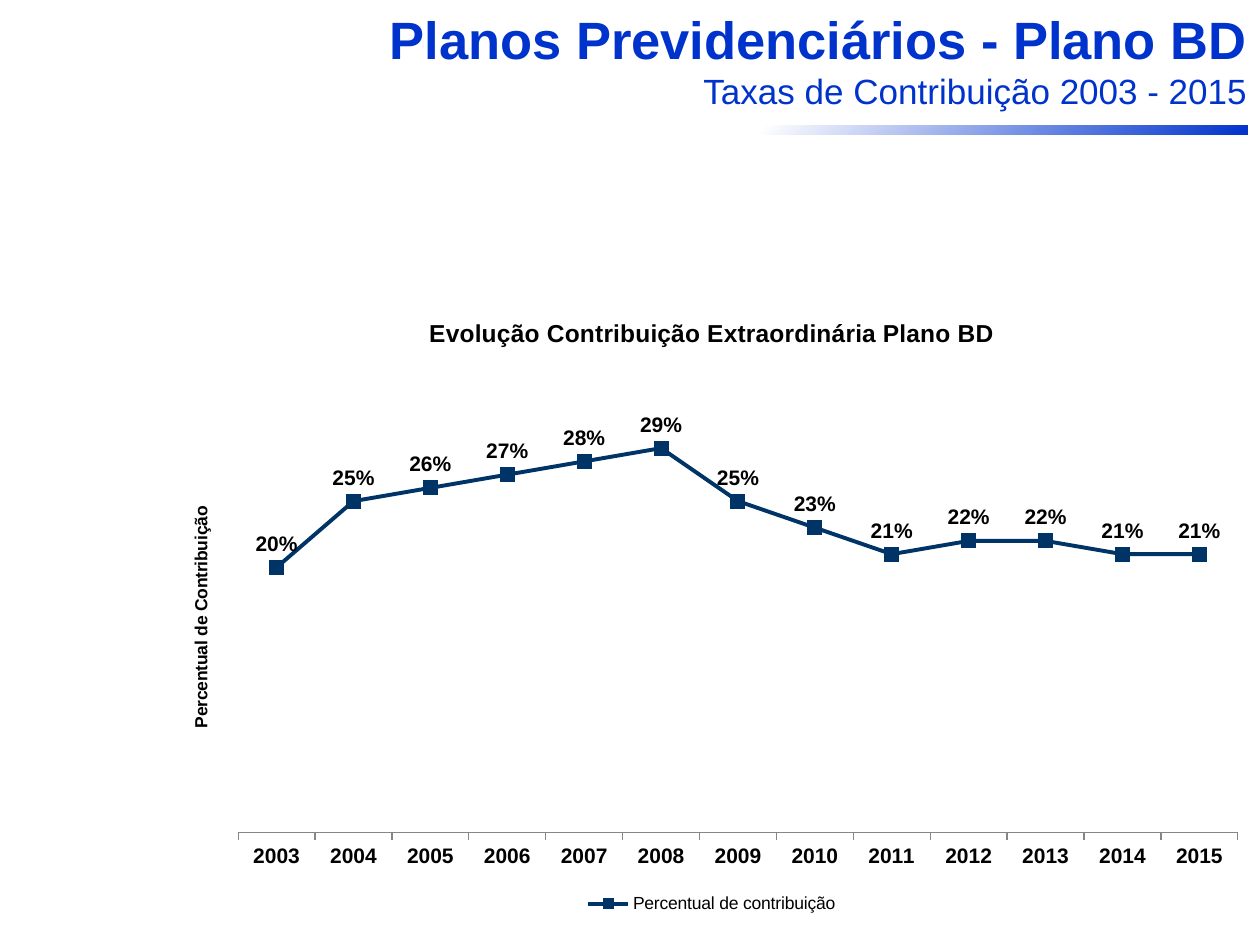
from pptx import Presentation
from pptx import util as u
from pptx.chart.data import CategoryChartData
from pptx.dml.color import RGBColor
from pptx.enum import chart as kinds, shapes, text
from pptx.oxml import parse_xml
from pptx.oxml.ns import nsdecls, qn

Pt = u.Pt
BLUE, NAVY, BLACK, GRAY = "0033CC", "003366", "000000", "868686"
CHART_WIDTH, CHART_HEIGHT = 626.4, 357.1


def colour(target, value):
    if hasattr(target, "solid"):
        target.solid()
        target = target.fore_color
    target.rgb = RGBColor.from_string(value)


def write(para, words, size, bold=True, shade=BLACK):
    span = para.add_run()
    span.text = words
    span.font.name = "Arial"
    span.font.size = Pt(size)
    span.font.bold = bold
    colour(span.font.color, shade)


deck = Presentation()
deck.slide_width, deck.slide_height = Pt(720), Pt(540)
page = deck.slides.add_slide(deck.slide_layouts[5])

bar = page.shapes.add_shape(
    shapes.MSO_SHAPE.RECTANGLE, Pt(436.3), Pt(71.5), Pt(276.5), Pt(5.5))
bar.shadow.inherit = False
bar.line.fill.background()
bar.fill.gradient()
bar.fill.gradient_angle = 315
for stop, shade, position in zip(bar.fill.gradient_stops, ("FFFFFF", BLUE), (0, 1)):
    colour(stop.color, shade)
    stop.position = position

title = page.shapes.title
title.left, title.top, title.width, title.height = Pt(72), Pt(0), Pt(648), Pt(67.7)
title.text_frame.word_wrap = True
title.text_frame.auto_size = text.MSO_AUTO_SIZE.SHAPE_TO_FIT_TEXT
heading = title.text_frame.paragraphs[0]
heading.alignment = text.PP_ALIGN.RIGHT
write(heading, "Planos Previdenciários - Plano BD", 30, shade=BLUE)
heading.add_line_break()
write(heading, "Taxas de Contribuição 2003 - 2015", 20, bold=False, shade=BLUE)

data = CategoryChartData(number_format="0%")
data.categories = [str(year) for year in range(2003, 2016)]
data.add_series("Percentual de contribuição", [
    0.2, 0.25, 0.26, 0.27, 0.28, 0.29, 0.25, 0.23,
    0.21, 0.22, 0.22, 0.21, 0.21])
chart = page.shapes.add_chart(
    kinds.XL_CHART_TYPE.LINE_MARKERS,
    Pt(93.6), Pt(167.8), Pt(CHART_WIDTH), Pt(CHART_HEIGHT), data).chart
chart.font.name = "Arial"
chart.font.size = Pt(18)
colour(chart.font.color, BLACK)

chart.has_title = True
write(chart.chart_title.text_frame.paragraphs[0],
      "Evolução Contribuição Extraordinária Plano BD", 14)
chart.chart_title.include_in_layout = False

chart.has_legend = True
chart.legend.position = kinds.XL_LEGEND_POSITION.BOTTOM
chart.legend.include_in_layout = False
chart.legend.font.size = Pt(10)

years = chart.category_axis
years.major_tick_mark = kinds.XL_TICK_MARK.OUTSIDE
years.tick_labels.font.size = Pt(12)
years.tick_labels.font.bold = True
colour(years.format.line.fill, GRAY)
years.format.line.width = Pt(0.75)

rates = chart.value_axis
rates.minimum_scale, rates.maximum_scale = 0, 0.35
rates.has_major_gridlines = False
rates.tick_labels.number_format = "0%"
rates.tick_labels.number_format_is_linked = False
rates.visible = False
write(rates.axis_title.text_frame.paragraphs[0], "Percentual de Contribuição", 10)
rates_title = rates.axis_title.element
turn = rates_title.find(".//" + qn("a:bodyPr"))
turn.set("rot", "-5400000")
turn.set("vert", "horz")

plot_area = chart.element.find(".//" + qn("c:plotArea"))
for owner, index, target, frame in (
        (plot_area, 0, '<c:layoutTarget val="inner"/>',
         {"x": 42.5, "y": 42.9, "w": 571.3, "h": 265}),
        (rates_title, 1, "", {"x": 12.8, "y": 119.8})):
    for old in owner.findall(qn("c:layout")):
        owner.remove(old)
    modes = "".join(f'<c:{side}Mode val="edge"/>' for side in "xy")
    sizes = "".join(
        f'<c:{side} val="{length / (CHART_WIDTH if side in "xw" else CHART_HEIGHT)}"/>'
        for side, length in frame.items())
    owner.insert(index, parse_xml(
        f'<c:layout {nsdecls("c")}><c:manualLayout>{target}{modes}{sizes}'
        '</c:manualLayout></c:layout>'))

plot = chart.plots[0]
plot.vary_by_categories = False
series = plot.series[0]
series.smooth = False
colour(series.format.line.fill, NAVY)
series.format.line.width = Pt(2.25)
series.marker.style = kinds.XL_MARKER_STYLE.SQUARE
series.marker.size = 8
colour(series.marker.format.fill, NAVY)
colour(series.marker.format.line.fill, NAVY)

labels = series.data_labels
labels.show_value = True
labels.position = kinds.XL_LABEL_POSITION.ABOVE
labels.number_format = "0%"
labels.number_format_is_linked = False
labels.font.size = Pt(12)
labels.font.bold = True

deck.save("out.pptx")
